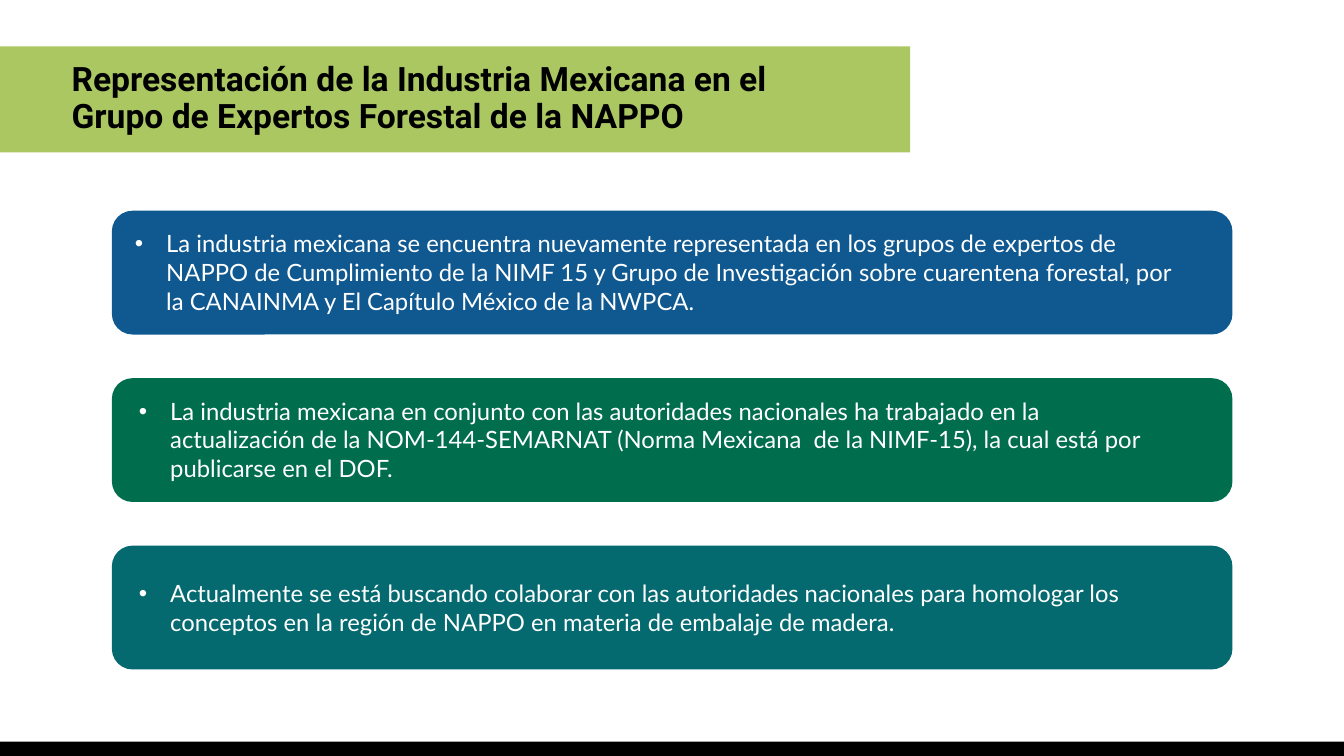
from dataclasses import dataclass

from lxml.etree import SubElement
from pptx import Presentation
from pptx.dml.color import RGBColor
from pptx.enum.shapes import MSO_SHAPE as Shape
from pptx.enum.text import MSO_ANCHOR as Anchor, PP_ALIGN as Align
from pptx.oxml.ns import qn
from pptx.util import Cm, Pt

BLACK = RGBColor(0x00, 0x00, 0x00)
WHITE = RGBColor(0xFF, 0xFF, 0xFF)
LIME = RGBColor(0xAB, 0xC7, 0x62)
BLUE = RGBColor(0x0F, 0x58, 0x90)
GREEN = RGBColor(0x00, 0x6D, 0x4D)
TEAL = RGBColor(0x04, 0x6A, 0x70)

SLIDE_W, SLIDE_H = 33.87, 19.05
FOOTER_H = 0.36
CARD_X, CARD_Y, CARD_W, CARD_H = 2.82, 5.31, 28.24, 3.12
CARD_PITCH = 4.22
BULLET_INDENT = 0.79


@dataclass(frozen=True)
class Card:
    text: str
    color: RGBColor
    text_x: float
    text_w: float
    text_h: float


CARDS = [
    Card("La industria mexicana se encuentra nuevamente representada en los grupos "
         "de expertos de NAPPO de Cumplimiento de la NIMF 15 y Grupo de Investigación "
         "sobre cuarentena forestal, por la CANAINMA y El Capítulo México de la NWPCA.",
         BLUE, 3.15, 26.95, 2.44),
    Card("La industria mexicana en conjunto con las autoridades nacionales ha trabajado "
         "en la actualización de la NOM-144-SEMARNAT (Norma Mexicana  de la NIMF-15), "
         "la cual está por publicarse en el DOF.",
         GREEN, 3.25, 26.42, 2.44),
    Card("Actualmente se está buscando colaborar con las autoridades nacionales para "
         "homologar los conceptos en la región de NAPPO en materia de embalaje de madera.",
         TEAL, 3.25, 26.75, 1.7),
]


def write(tf, text: str, *, font: str, size: float, color: RGBColor,
          bold: bool = False, spacing: float = 1.0, anchor=Anchor.TOP,
          bullet: bool = False) -> None:
    tf.word_wrap = True
    tf.vertical_anchor = anchor
    p = tf.paragraphs[0]
    p.alignment = Align.LEFT
    p.line_spacing = spacing
    r = p.add_run()
    r.text = text
    r.font.name = font
    r.font.size = Pt(size)
    r.font.bold = bold
    r.font.color.rgb = color
    if bullet:
        pPr = p._p.get_or_add_pPr()
        pPr.set("marL", str(Cm(BULLET_INDENT)))
        pPr.set("indent", str(-Cm(BULLET_INDENT)))
        SubElement(pPr, qn("a:buFont")).set("typeface", "Arial")
        SubElement(pPr, qn("a:buChar")).set("char", "•")


def add_block(slide, kind, x: float, y: float, w: float, h: float,
              color: RGBColor) -> None:
    sp = slide.shapes.add_shape(kind, Cm(x), Cm(y), Cm(w), Cm(h))
    sp.shadow.inherit = False
    sp.fill.solid()
    sp.fill.fore_color.rgb = color
    sp.line.fill.background()


def add_title(slide, text: str) -> None:
    add_block(slide, Shape.RECTANGLE, 0, 1.17, 22.94, 2.67, LIME)
    sp = slide.shapes.title
    slide.shapes._spTree.append(sp._element)
    sp.left, sp.top, sp.width, sp.height = Cm(1.55), Cm(0.86), Cm(20.52), Cm(3.28)
    write(sp.text_frame, text, font="Roboto", size=24, color=BLACK, bold=True,
          spacing=0.9, anchor=Anchor.MIDDLE)


def add_card(slide, card: Card, y: float) -> None:
    add_block(slide, Shape.ROUNDED_RECTANGLE, CARD_X, y, CARD_W, CARD_H, card.color)
    text_y = y + (CARD_H - card.text_h) / 2
    sp = slide.shapes.add_textbox(Cm(card.text_x), Cm(text_y),
                                  Cm(card.text_w), Cm(card.text_h))
    write(sp.text_frame, card.text, font="Lato", size=17, color=WHITE, bullet=True)


def main() -> None:
    prs = Presentation()
    prs.slide_width, prs.slide_height = Cm(SLIDE_W), Cm(SLIDE_H)
    slide = prs.slides.add_slide(prs.slide_layouts[5])
    add_title(slide, "Representación de la Industria Mexicana en el "
                     "Grupo de Expertos Forestal de la NAPPO")
    for i, card in enumerate(CARDS):
        add_card(slide, card, CARD_Y + i * CARD_PITCH)
    add_block(slide, Shape.RECTANGLE, 0, SLIDE_H - FOOTER_H, SLIDE_W, FOOTER_H, BLACK)
    prs.save("out.pptx")


if __name__ == "__main__":
    main()
